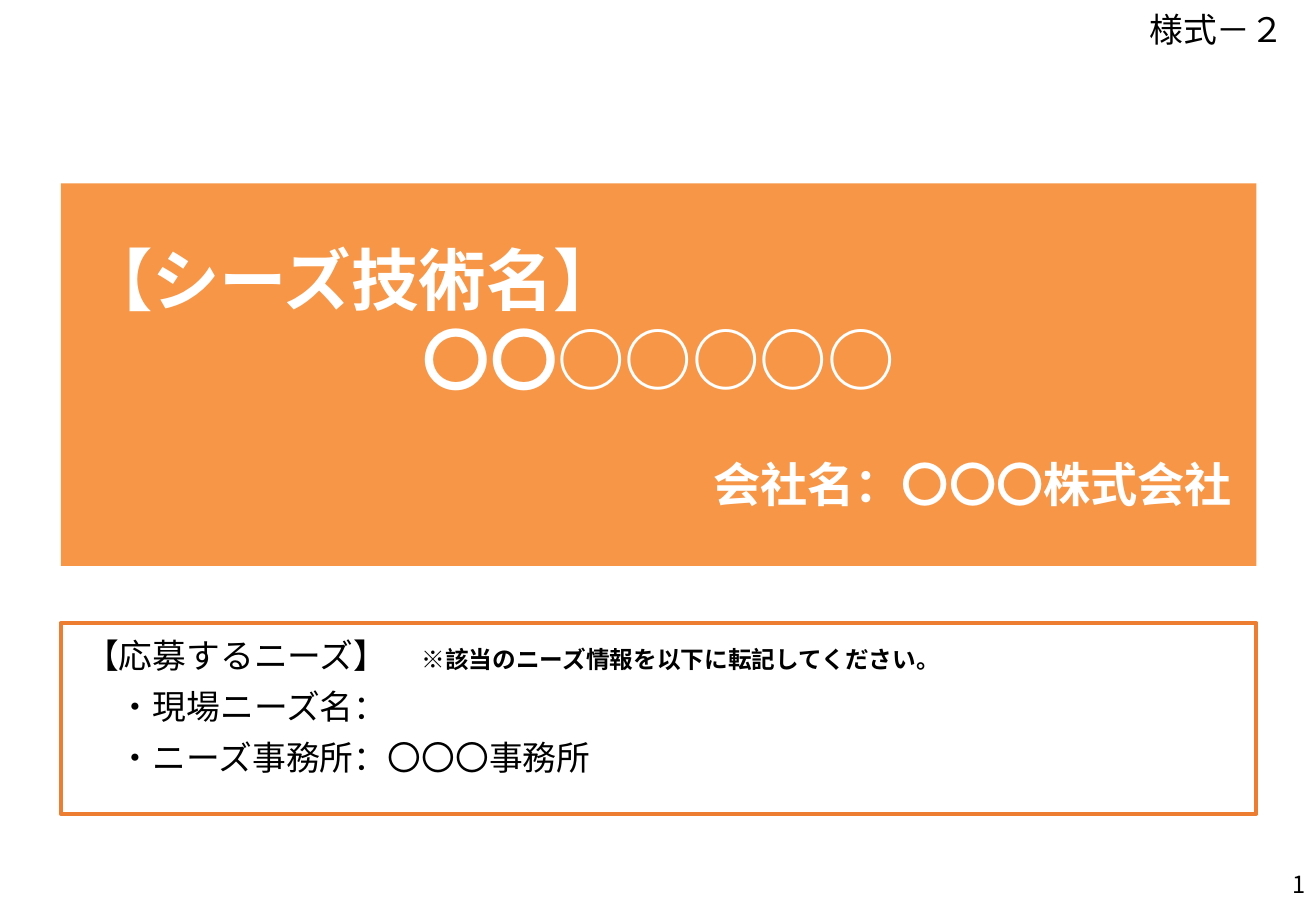
from pptx import Presentation
from pptx.dml.color import RGBColor
from pptx.enum.shapes import MSO_SHAPE
from pptx.enum.text import MSO_ANCHOR, MSO_AUTO_SIZE, PP_ALIGN as ALIGN
from pptx.oxml.ns import qn
from pptx.util import Pt

PX = 9144
FONT = "Noto Sans CJK JP"
ORANGE = RGBColor(0xF7, 0x96, 0x46)
BORDER = RGBColor(0xED, 0x7D, 0x31)
WHITE = RGBColor(0xFF, 0xFF, 0xFF)
BLACK = RGBColor(0x00, 0x00, 0x00)


def place(shape, left, top, width, height):
    shape.left, shape.top = left * PX, top * PX
    shape.width, shape.height = width * PX, height * PX


def write(shape, paragraphs, color, anchor, inset_x, inset_y):
    frame = shape.text_frame
    frame.word_wrap = True
    frame.auto_size = MSO_AUTO_SIZE.NONE
    frame.vertical_anchor = anchor
    frame.margin_left = frame.margin_right = inset_x * PX
    frame.margin_top = frame.margin_bottom = inset_y * PX
    for index, (align, before, after, runs) in enumerate(paragraphs):
        paragraph = frame.add_paragraph() if index else frame.paragraphs[0]
        paragraph.alignment = align
        paragraph.space_before, paragraph.space_after = Pt(before), Pt(after)
        for text, size, bold in runs:
            run = paragraph.add_run()
            run.text = text
            run.font.size, run.font.bold = Pt(size), bold
            run.font.name = FONT
            run.font.color.rgb = color
            east_asian = run.font._element.makeelement(qn("a:ea"), {"typeface": FONT})
            run.font._element.find(qn("a:latin")).addnext(east_asian)


presentation = Presentation()
presentation.slide_width, presentation.slide_height = 1083 * PX, 750 * PX
slide = presentation.slides.add_slide(presentation.slide_layouts[5])

banner = slide.shapes.title
place(banner, 50, 151, 984, 315)
banner.fill.solid()
banner.fill.fore_color.rgb = ORANGE
write(banner, [
    (ALIGN.LEFT, 0, 0, [("【シーズ技術名】", 40, True)]),
    (ALIGN.CENTER, 0, 0, [("〇〇○○○○○", 40, True)]),
    (ALIGN.RIGHT, 33, 0, [("会社名：〇〇〇株式会社", 28, True)]),
], WHITE, MSO_ANCHOR.MIDDLE, 20, 20)

form_label = slide.shapes.add_textbox(0, 0, 0, 0)
place(form_label, 920, 8, 163, 32)
form_label.fill.solid()
form_label.fill.fore_color.rgb = WHITE
write(form_label, [(ALIGN.CENTER, 0, 0, [("様式－２", 20, False)])],
      BLACK, MSO_ANCHOR.MIDDLE, 0, 0)

needs_box = slide.shapes.add_shape(MSO_SHAPE.RECTANGLE, 0, 0, 0, 0)
place(needs_box, 50, 513, 984, 157)
needs_box.shadow.inherit = False
needs_box.fill.background()
needs_box.line.color.rgb = BORDER
needs_box.line.width = Pt(2.5)
write(needs_box, [
    (ALIGN.LEFT, 0, 6, [("【応募するニーズ】　", 20, False),
                        ("※該当のニーズ情報を以下に転記してください。", 14, True)]),
    (ALIGN.LEFT, 0, 6, [("　・現場ニーズ名：", 20, False)]),
    (ALIGN.LEFT, 0, 6, [("　・ニーズ事務所：〇〇〇事務所", 20, False)]),
], BLACK, MSO_ANCHOR.TOP, 20, 10)

page_number = slide.shapes.add_textbox(0, 0, 0, 0)
place(page_number, 840, 708, 244, 40)
write(page_number, [(ALIGN.RIGHT, 0, 0, [("1", 14, False)])],
      BLACK, MSO_ANCHOR.MIDDLE, 10, 5)

presentation.save("out.pptx")
